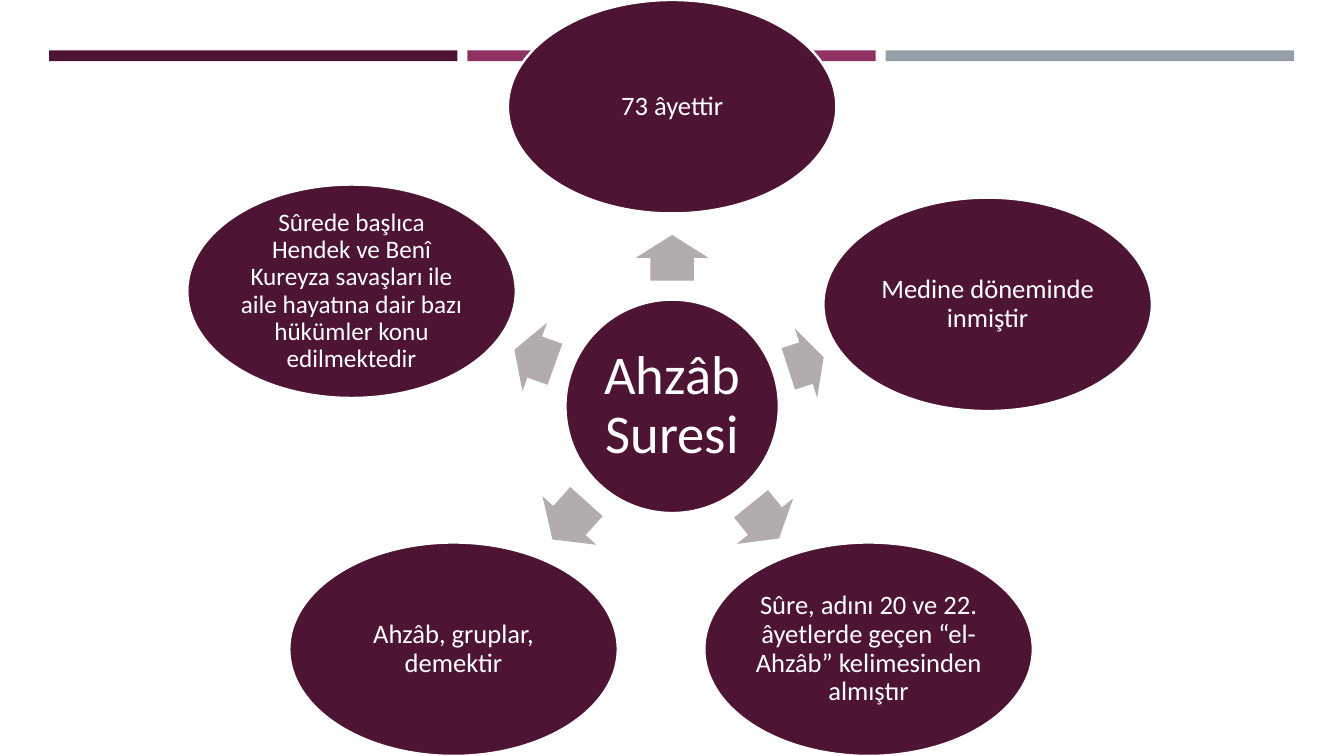
"""Builds a radial diagram slide about Ahzâb Suresi."""
import math

from pptx import Presentation
from pptx.dml.color import RGBColor
from pptx.enum.shapes import MSO_SHAPE
from pptx.enum.text import MSO_ANCHOR, PP_ALIGN
from pptx.util import Cm, Pt

RECTANGLE, OVAL, ARROW = MSO_SHAPE.RECTANGLE, MSO_SHAPE.OVAL, MSO_SHAPE.RIGHT_ARROW
MIDDLE, CENTER = MSO_ANCHOR.MIDDLE, PP_ALIGN.CENTER

THEME = {
    "font": "Calibri",
    "plum": "4D1434",
    "berry": "903163",
    "steel": "969FA7",
    "arrow": "B2ACAE",
    "white": "FFFFFF",
    "hub_size": 39,
    "topic_size": 19,
    "long_topic_size": 18,
    "outline": 1.75,
}

BARS = ["plum", "berry", "steel"]
HUB = ("Ahzâb Suresi", 16.94, 10.24)
TOPICS = [
    ("73 âyettir", 16.94, 2.69, "topic_size"),
    ("Medine döneminde inmiştir", 24.89, 7.67, "topic_size"),
    ("Sûre, adını 20 ve 22. âyetlerde geçen “el-Ahzâb” kelimesinden almıştır",
     21.89, 16.36, "topic_size"),
    ("Ahzâb, gruplar, demektir", 11.43, 16.36, "topic_size"),
    ("Sûrede başlıca Hendek ve Benî Kureyza savaşları ile aile hayatına dair "
     "bazı hükümler konu edilmektedir", 8.86, 7.34, "long_topic_size"),
]

BAR_LEFT, BAR_TOP, BAR_WIDTH, BAR_HEIGHT, BAR_PITCH = 1.24, 1.27, 10.29, 0.27, 10.54
HUB_DIAMETER = 5.38
TOPIC_WIDTH, TOPIC_HEIGHT = 8.28, 5.38
ARROW_THICKNESS, ARROW_SHARE, ARROW_SHIFT = 1.83, 0.53, 0.03


def color(name):
    return RGBColor.from_string(THEME[name])


def add_filled(slide, kind, center_x, center_y, width, height, fill):
    shape = slide.shapes.add_shape(
        kind, Cm(center_x - width / 2), Cm(center_y - height / 2), Cm(width), Cm(height))
    shape.shadow.inherit = False
    shape.fill.solid()
    shape.fill.fore_color.rgb = color(fill)
    shape.line.fill.background()
    return shape


def add_bubble(slide, text, center_x, center_y, width, height, size, inset):
    shape = add_filled(slide, OVAL, center_x, center_y, width, height, "plum")
    shape.line.color.rgb = color("white")
    shape.line.width = Pt(THEME["outline"])
    frame = shape.text_frame
    frame.word_wrap = True
    frame.vertical_anchor = MIDDLE
    frame.margin_left = frame.margin_right = Cm(inset)
    frame.margin_top = frame.margin_bottom = Cm(inset)
    frame.text = text
    paragraph = frame.paragraphs[0]
    paragraph.alignment = CENTER
    paragraph.line_spacing = 0.9
    font = paragraph.runs[0].font
    font.name = THEME["font"]
    font.size = Pt(THEME[size])
    font.color.rgb = color("white")


def add_arrow(slide, hub_x, hub_y, topic_x, topic_y):
    across, down = topic_x - hub_x, topic_y - hub_y
    angle = math.atan2(down, across)
    topic_radius = 1 / math.hypot(
        math.cos(angle) / (TOPIC_WIDTH / 2), math.sin(angle) / (TOPIC_HEIGHT / 2))
    gap = math.hypot(across, down) - HUB_DIAMETER / 2 - topic_radius
    distance = HUB_DIAMETER / 2 + gap / 2 - ARROW_SHIFT
    arrow = add_filled(
        slide, ARROW,
        hub_x + distance * math.cos(angle), hub_y + distance * math.sin(angle),
        gap * ARROW_SHARE, ARROW_THICKNESS, "arrow")
    arrow.adjustments[0] = 0.6
    arrow.adjustments[1] = 0.5
    arrow.rotation = math.degrees(angle) % 360


def main():
    presentation = Presentation()
    presentation.slide_width, presentation.slide_height = Cm(33.87), Cm(19.05)
    slide = presentation.slides.add_slide(presentation.slide_layouts[6])

    for index, fill in enumerate(BARS):
        add_filled(slide, RECTANGLE, BAR_LEFT + index * BAR_PITCH + BAR_WIDTH / 2,
                   BAR_TOP + BAR_HEIGHT / 2, BAR_WIDTH, BAR_HEIGHT, fill)

    title, hub_x, hub_y = HUB
    add_bubble(slide, title, hub_x, hub_y, HUB_DIAMETER, HUB_DIAMETER, "hub_size", 0.13)
    for text, topic_x, topic_y, size in TOPICS:
        add_arrow(slide, hub_x, hub_y, topic_x, topic_y)
        add_bubble(slide, text, topic_x, topic_y, TOPIC_WIDTH, TOPIC_HEIGHT, size, 0.08)

    presentation.save("out.pptx")


if __name__ == "__main__":
    main()
